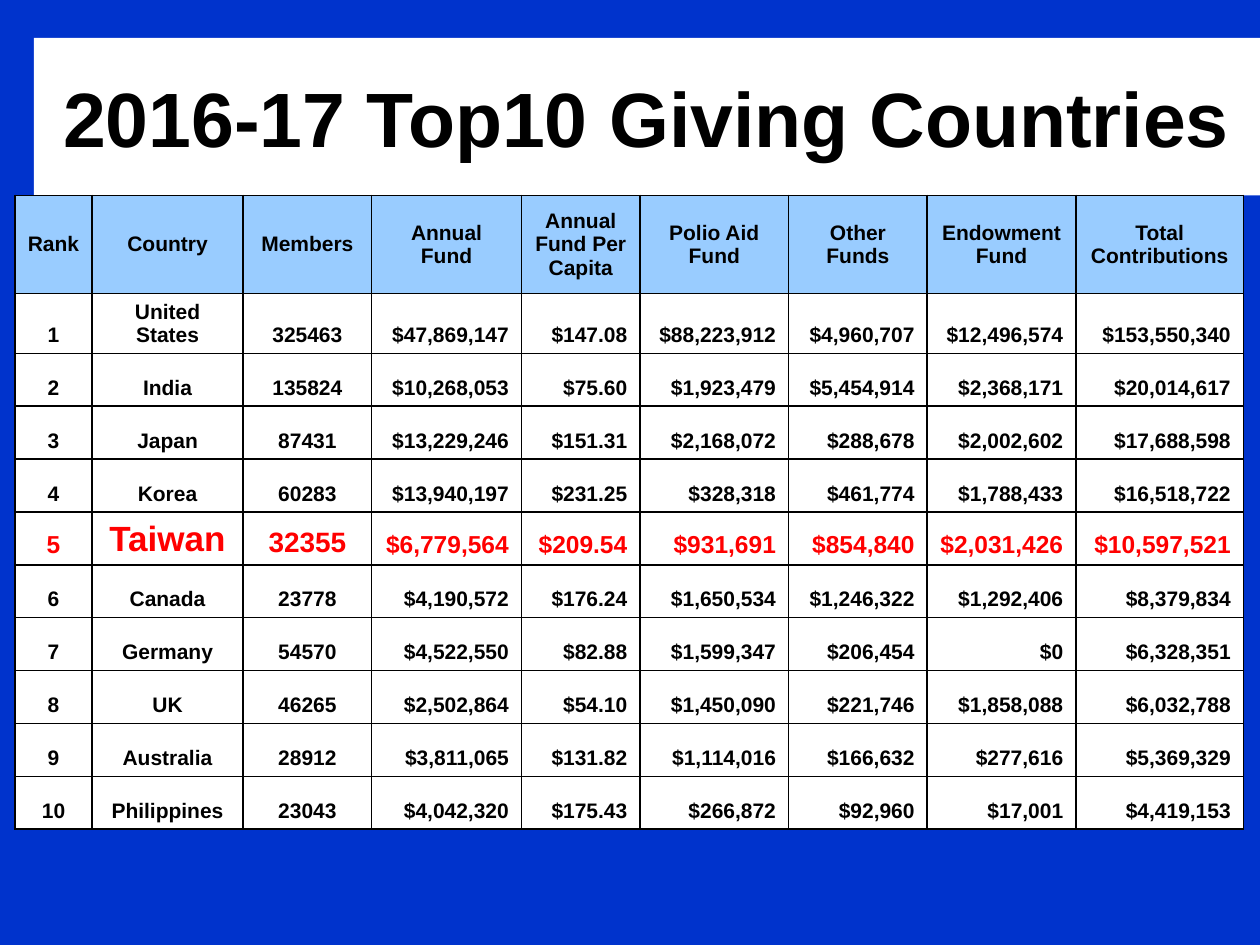
"""Build the slide of the ten top giving countries."""
import dataclasses

import pptx
import pptx.dml.color
import pptx.enum.shapes
import pptx.enum.text
import pptx.oxml
import pptx.oxml.ns
import pptx.util

Inches = pptx.util.Inches
ALIGN = pptx.enum.text.PP_ALIGN
ANCHOR = pptx.enum.text.MSO_ANCHOR


@dataclasses.dataclass(frozen=True)
class Theme:
    """Hold the colours and type sizes."""
    font: str = "Arial"
    back: str = "0033CC"
    head: str = "99CCFF"
    white: str = "FFFFFF"
    black: str = "000000"
    red: str = "FF0000"
    title: int = 44
    body: int = 12
    strong: tuple = (14, 20, 16) + (14,) * 6


THEME = Theme()
HOME = "Taiwan"
HANG = 0.38
WIDTHS = [0.61, 1.2, 1.02, 1.19, 0.94, 1.18, 1.1, 1.18, 1.33]
HEIGHTS = [0.78] + [0.42] * 10
HEADS = ["Rank", "Country", "Members", "Annual Fund", "Annual Fund Per Capita",
         "Polio Aid Fund", "Other Funds", "Endowment Fund", "Total Contributions"]
ROWS = [
    ["United States", "325463", "$47,869,147", "$147.08", "$88,223,912",
     "$4,960,707", "$12,496,574", "$153,550,340"],
    ["India", "135824", "$10,268,053", "$75.60", "$1,923,479",
     "$5,454,914", "$2,368,171", "$20,014,617"],
    ["Japan", "87431", "$13,229,246", "$151.31", "$2,168,072",
     "$288,678", "$2,002,602", "$17,688,598"],
    ["Korea", "60283", "$13,940,197", "$231.25", "$328,318",
     "$461,774", "$1,788,433", "$16,518,722"],
    [HOME, "32355", "$6,779,564", "$209.54", "$931,691",
     "$854,840", "$2,031,426", "$10,597,521"],
    ["Canada", "23778", "$4,190,572", "$176.24", "$1,650,534",
     "$1,246,322", "$1,292,406", "$8,379,834"],
    ["Germany", "54570", "$4,522,550", "$82.88", "$1,599,347",
     "$206,454", "$0", "$6,328,351"],
    ["UK", "46265", "$2,502,864", "$54.10", "$1,450,090",
     "$221,746", "$1,858,088", "$6,032,788"],
    ["Australia", "28912", "$3,811,065", "$131.82", "$1,114,016",
     "$166,632", "$277,616", "$5,369,329"],
    ["Philippines", "23043", "$4,042,320", "$175.43", "$266,872",
     "$92,960", "$17,001", "$4,419,153"],
]


def paint(fill, tone):
    """Give a fill one solid colour."""
    fill.solid()
    fill.fore_color.rgb = pptx.dml.color.RGBColor.from_string(tone)


def write(frame, text, *, size=THEME.body, tone=THEME.black, align=ALIGN.CENTER, hang=0):
    """Write one bold paragraph into a text frame."""
    frame.word_wrap = True
    para = frame.paragraphs[0]
    para.alignment = align
    if hang:
        props = para._p.get_or_add_pPr()
        props.set("marL", str(Inches(hang)))
        props.set("indent", str(-Inches(hang)))
    run = para.add_run()
    run.text = text
    font = run.font
    font.name, font.size, font.bold = THEME.font, pptx.util.Pt(size), True
    font.color.rgb = pptx.dml.color.RGBColor.from_string(tone)


def edge(cell):
    """Draw a thin line on each side of a cell."""
    props = cell._tc.get_or_add_tcPr()
    for spot, side in enumerate(("lnL", "lnR", "lnT", "lnB")):
        line = pptx.oxml.parse_xml(
            f'<a:{side} {pptx.oxml.ns.nsdecls("a")} w="{pptx.util.Pt(1)}"><a:solidFill>'
            f'<a:srgbClr val="{THEME.black}"/></a:solidFill></a:{side}>')
        props.insert(spot, line)


def add_title(slide, text):
    """Add the white title band."""
    band = slide.shapes.add_shape(pptx.enum.shapes.MSO_SHAPE.RECTANGLE, Inches(0.27),
                                  Inches(0.3), Inches(9.73), Inches(1.25))
    band.shadow.inherit = False
    paint(band.fill, THEME.white)
    band.line.fill.background()
    band.text_frame.vertical_anchor = ANCHOR.MIDDLE
    write(band.text_frame, text, size=THEME.title)


def add_cell(cell, text, *, fill, anchor, **style):
    """Fill, edge and write one cell, with a hanging indent for single words."""
    paint(cell.fill, fill)
    edge(cell)
    cell.vertical_anchor = anchor
    write(cell.text_frame, text, hang=0 if " " in text else HANG, **style)


def add_grid(slide):
    """Add the table of countries with the home row in red."""
    grid = slide.shapes.add_table(
        len(HEIGHTS), len(WIDTHS), Inches(0.12), Inches(1.55),
        Inches(sum(WIDTHS)), Inches(sum(HEIGHTS))).table
    for col, width in zip(grid.columns, WIDTHS):
        col.width = Inches(width)
    for row, height in zip(grid.rows, HEIGHTS):
        row.height = Inches(height)
    for col, text in enumerate(HEADS):
        add_cell(grid.cell(0, col), text, fill=THEME.head, anchor=ANCHOR.MIDDLE)
    for rank, data in enumerate(ROWS, 1):
        home = data[0] == HOME
        for col, text in enumerate([str(rank)] + data):
            add_cell(grid.cell(rank, col), text, fill=THEME.white, anchor=ANCHOR.BOTTOM,
                     size=THEME.strong[col] if home else THEME.body,
                     tone=THEME.red if home else THEME.black,
                     align=ALIGN.CENTER if col < 3 else ALIGN.RIGHT)


def main():
    """Build and save the deck."""
    deck = pptx.Presentation()
    deck.slide_width, deck.slide_height = Inches(10), Inches(7.5)
    slide = deck.slides.add_slide(deck.slide_layouts[6])
    paint(slide.background.fill, THEME.back)
    add_title(slide, "2016-17 Top10 Giving Countries")
    add_grid(slide)
    deck.save("out.pptx")


if __name__ == "__main__":
    main()
